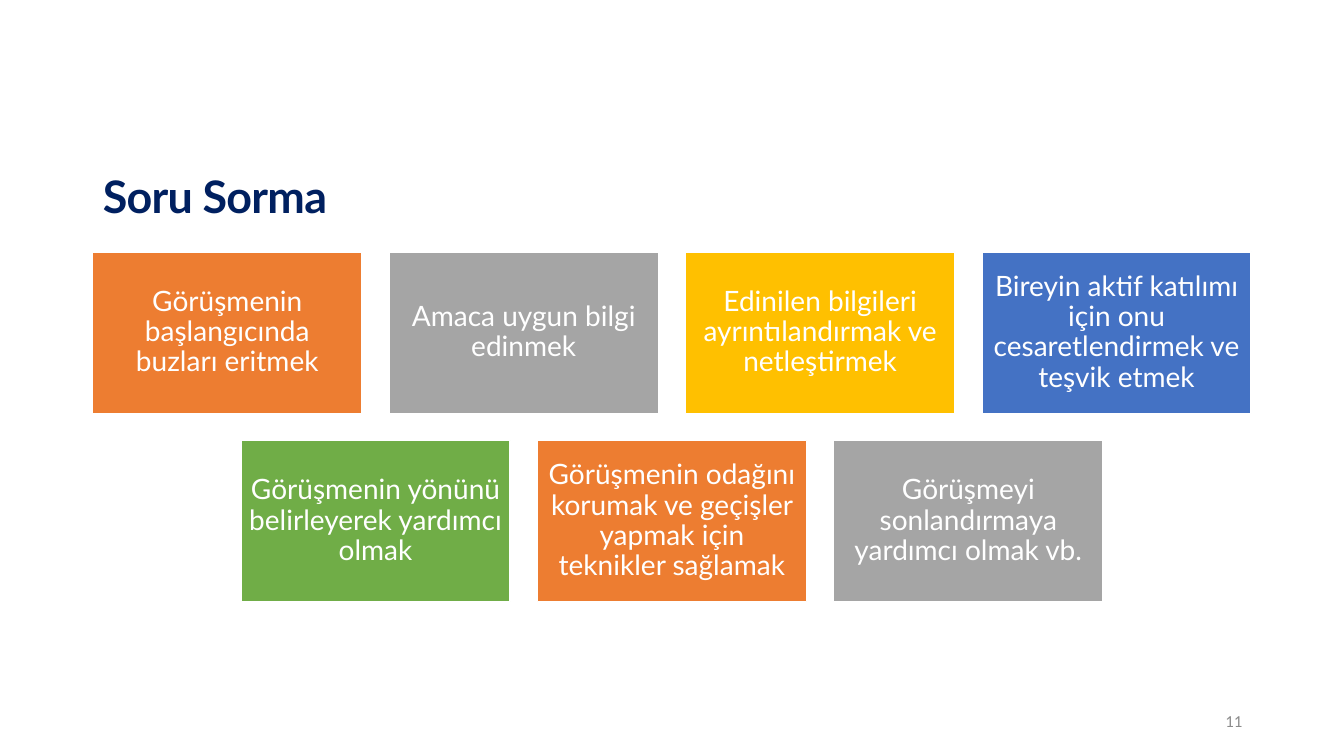
from pptx import Presentation
from pptx.dml.color import RGBColor
from pptx.enum.shapes import MSO_SHAPE
from pptx.enum.text import MSO_ANCHOR, MSO_AUTO_SIZE, PP_ALIGN
from pptx.util import Pt

PX = 9144  # EMU per px, 100 px to the inch
SLIDE_WIDTH, SLIDE_HEIGHT = 1333, 750
COLORS = {
    "navy": "002060", "white": "FFFFFF", "muted": "8C8C8C",
    "orange": "ED7D31", "gray": "A5A5A5", "gold": "FFC000",
    "blue": "4472C4", "green": "70AD47",
}
TITLE = {"name": "Lato", "size": Pt(32), "bold": True}
CARD = {"name": "Lato", "size": Pt(20), "bold": False}
NUMBER = {"name": "Calibri", "size": Pt(12), "bold": False}


def color(name):
    return RGBColor.from_string(COLORS[name])


class SlideBuilder:
    def __init__(self, slide):
        self.slide = slide

    def set_text(self, shape, text, style, ink, align, spacing=1.0, inset=None):
        frame = shape.text_frame
        frame.word_wrap = True
        frame.auto_size = MSO_AUTO_SIZE.NONE
        frame.vertical_anchor = MSO_ANCHOR.MIDDLE
        if inset is not None:
            for side in ("left", "top", "right", "bottom"):
                setattr(frame, f"margin_{side}", inset * PX)
        paragraph = frame.paragraphs[0]
        paragraph.alignment = align
        paragraph.line_spacing = spacing
        run = paragraph.add_run()
        run.text = text
        for key, value in style.items():
            setattr(run.font, key, value)
        run.font.color.rgb = color(ink)
        return run

    def title(self, text, left, top, width, height):
        heading = self.slide.shapes.title
        box = {"left": left, "top": top, "width": width, "height": height}
        for key, value in box.items():
            setattr(heading, key, value * PX)
        run = self.set_text(heading, text, TITLE, "navy", PP_ALIGN.LEFT, 0.9)
        run._r.get_or_add_rPr().set("spc", "-50")

    def card(self, text, fill, *box):
        card = self.slide.shapes.add_shape(
            MSO_SHAPE.RECTANGLE, *(length * PX for length in box))
        card.shadow.inherit = False
        card.fill.solid()
        card.fill.fore_color.rgb = color(fill)
        card.line.color.rgb = color("white")
        card.line.width = Pt(1)
        self.set_text(card, text, CARD, "white", PP_ALIGN.CENTER, 0.9, 8)

    def page_number(self, text, *box):
        number = self.slide.shapes.add_textbox(*(length * PX for length in box))
        self.set_text(number, text, NUMBER, "muted", PP_ALIGN.RIGHT)


CARD_WIDTH, CARD_HEIGHT, GAP = 267, 160, 27
FIRST_ROW_TOP = 250
PURPOSE_ROWS = [
    [("Görüşmenin başlangıcında buzları eritmek", "orange"),
     ("Amaca uygun bilgi edinmek", "gray"),
     ("Edinilen bilgileri ayrıntılandırmak ve netleştirmek", "gold"),
     ("Bireyin aktif katılımı için onu cesaretlendirmek ve teşvik etmek", "blue")],
    [("Görüşmenin yönünü belirleyerek yardımcı olmak", "green"),
     ("Görüşmenin odağını korumak ve geçişler yapmak için teknikler sağlamak",
      "orange"),
     ("Görüşmeyi sonlandırmaya yardımcı olmak vb.", "gray")],
]


def main():
    deck = Presentation()
    deck.slide_width, deck.slide_height = SLIDE_WIDTH * PX, SLIDE_HEIGHT * PX
    builder = SlideBuilder(deck.slides.add_slide(deck.slide_layouts[5]))

    # Title
    builder.title("Soru Sorma", 92, 125, 1150, 145)

    # Purposes of asking questions, each row centred on the slide
    for row, purposes in enumerate(PURPOSE_ROWS):
        row_width = len(purposes) * (CARD_WIDTH + GAP) - GAP
        row_left = (SLIDE_WIDTH - row_width) // 2
        top = FIRST_ROW_TOP + row * (CARD_HEIGHT + GAP)
        for column, (purpose, fill) in enumerate(purposes):
            left = row_left + column * (CARD_WIDTH + GAP)
            builder.card(purpose, fill, left, top, CARD_WIDTH, CARD_HEIGHT)

    # Page number
    builder.page_number("11", 942, 695, 300, 40)

    deck.save("out.pptx")


if __name__ == "__main__":
    main()
